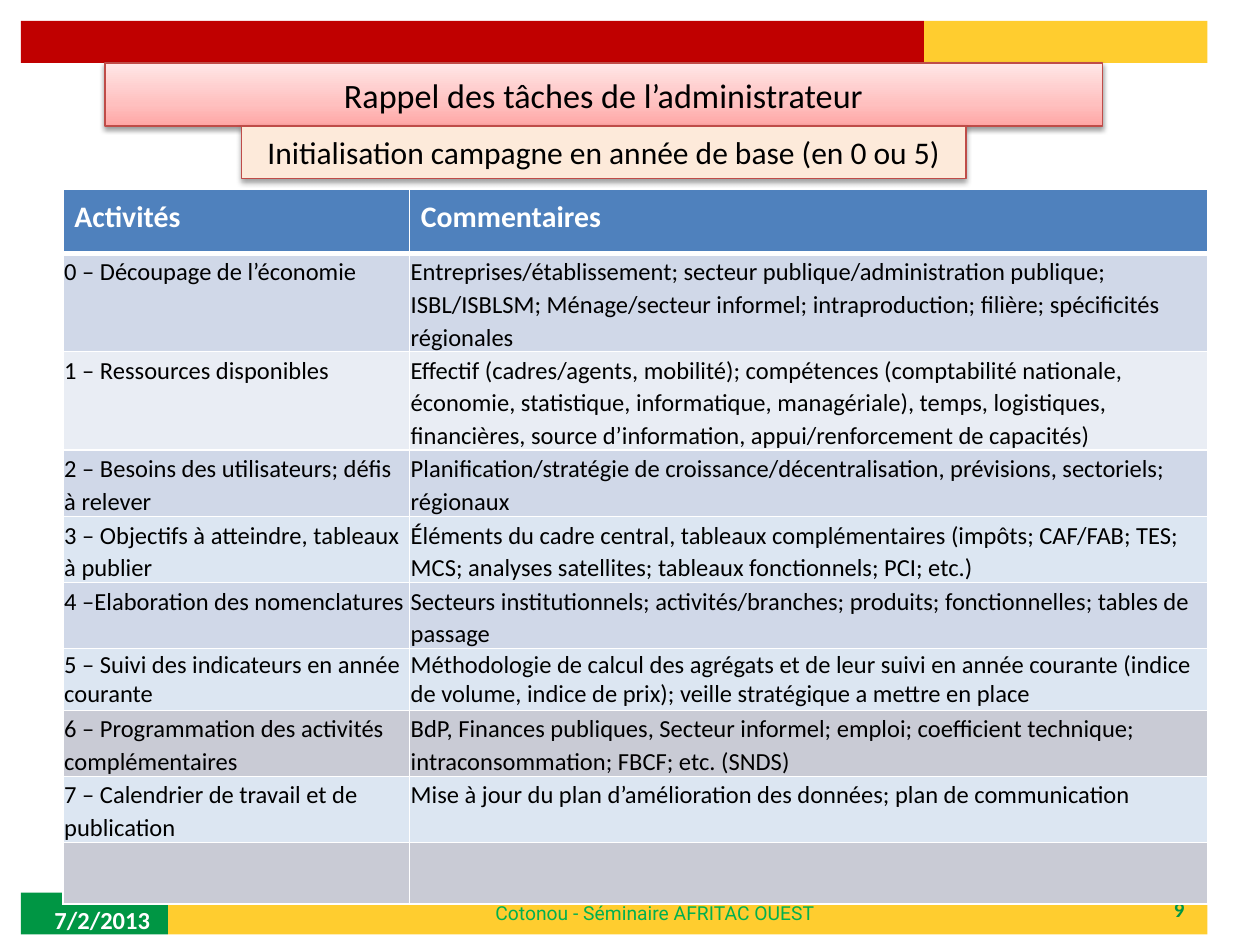
"""Build the slide recalling the administrator's tasks for a base-year campaign."""
from typing import NamedTuple, Optional

from pptx import Presentation
from pptx.dml.color import RGBColor
from pptx.enum.shapes import MSO_SHAPE
from pptx.enum.text import MSO_ANCHOR, PP_ALIGN
from pptx.oxml import parse_xml
from pptx.oxml.ns import nsdecls
from pptx.util import Emu, Inches, Pt

RECTANGLE = MSO_SHAPE.RECTANGLE
MIDDLE, TOP = MSO_ANCHOR.MIDDLE, MSO_ANCHOR.TOP
LEFT, CENTER, RIGHT = PP_ALIGN.LEFT, PP_ALIGN.CENTER, PP_ALIGN.RIGHT

WHITE = RGBColor(0xFF, 0xFF, 0xFF)
BLACK = RGBColor(0x00, 0x00, 0x00)
GREEN = RGBColor(0x00, 0x96, 0x44)
FOOTER_GREEN = RGBColor(0x00, 0xB0, 0x50)
YELLOW = RGBColor(0xFF, 0xCD, 0x2F)
RED = RGBColor(0xC0, 0x00, 0x00)
BANNER_LINE = RGBColor(0xBF, 0x4C, 0x48)
PEACH = RGBColor(0xFD, 0xEA, 0xDA)
PINK_STOPS = (
    (0, RGBColor(0xFF, 0xA6, 0xA5)),
    (35, RGBColor(0xFF, 0xC0, 0xBF)),
    (100, RGBColor(0xFF, 0xE7, 0xE7)),
)
HEADER_BLUE = RGBColor(0x4F, 0x81, 0xBD)
BAND_BLUE = RGBColor(0xD0, 0xD8, 0xE8)
PALE_BLUE = RGBColor(0xE9, 0xED, 0xF4)
LIGHT_BLUE = RGBColor(0xDC, 0xE6, 0xF2)
GREY = RGBColor(0xC9, 0xCB, 0xD5)

SLIDE_WIDTH, SLIDE_HEIGHT = Inches(10), Inches(7.5)
GRID_COLUMNS = 120
UNIT = SLIDE_WIDTH // GRID_COLUMNS


class Box(NamedTuple):
    """Left, top, width and height in grid units."""
    left: float
    top: float
    width: float
    height: float


class Banner(NamedTuple):
    """Framed heading; without a fill it takes the pink gradient."""
    box: Box
    text: str
    size: float
    fill: Optional[RGBColor]


class Label(NamedTuple):
    """Footer text and its format."""
    box: Box
    text: str
    size: float
    color: RGBColor
    font: str = "Calibri"
    bold: bool = True
    align: PP_ALIGN = LEFT
    anchor: MSO_ANCHOR = MIDDLE
    wrap: bool = True


class Task(NamedTuple):
    """Table row with its height in inches."""
    activity: str
    comment: str
    height: float
    fill: RGBColor
    spacing: float = 1.1


BARS = (
    (Box(2, 85, 14, 4), GREEN),
    (Box(16, 85, 99, 4), YELLOW),
    (Box(2, 2, 86, 4), RED),
    (Box(88, 2, 27, 4), YELLOW),
)
LABELS = (
    Label(Box(86, 85, 28, 3.2), "9", 12, GREEN, align=RIGHT),
    Label(Box(4, 85.2, 28, 4.8), "7/2/2013", 14, WHITE),
    Label(Box(46, 85.2, 33.2, 3.5), "Cotonou - Séminaire AFRITAC OUEST", 11, FOOTER_GREEN,
          font="Roboto", bold=False, anchor=TOP, wrap=False),
)
BANNERS = (
    Banner(Box(10, 6, 95, 6), "Rappel des tâches de l’administrateur", 19.5, None),
    Banner(Box(23, 12, 69, 5), "Initialisation campagne en année de base (en 0 ou 5)", 18, PEACH),
)
TABLE_BOX = Box(6, 18, 109, 67.7)
TABLE_COLUMNS = (33, 76)
TASKS = (
    Task("Activités", "Commentaires", 0.51, HEADER_BLUE),
    Task("0 – Découpage de l’économie",
         "Entreprises/établissement; secteur publique/administration publique; ISBL/ISBLSM; "
         "Ménage/secteur informel; intraproduction; filière; spécificités régionales", 0.49, BAND_BLUE),
    Task("1 – Ressources disponibles",
         "Effectif (cadres/agents, mobilité); compétences (comptabilité nationale, économie, "
         "statistique, informatique, managériale), temps, logistiques, financières, source "
         "d’information, appui/renforcement de capacités)", 0.73, PALE_BLUE),
    Task("2 – Besoins des utilisateurs; défis à relever",
         "Planification/stratégie de croissance/décentralisation, prévisions, sectoriels; régionaux",
         0.53, BAND_BLUE),
    Task("3 – Objectifs à atteindre, tableaux à publier",
         "Éléments du cadre central, tableaux complémentaires (impôts; CAF/FAB; TES; MCS; "
         "analyses satellites; tableaux fonctionnels; PCI; etc.)", 0.52, LIGHT_BLUE),
    Task("4 –Elaboration des nomenclatures",
         "Secteurs institutionnels; activités/branches; produits; fonctionnelles; tables de passage",
         0.49, BAND_BLUE),
    Task("5 – Suivi des indicateurs en année courante",
         "Méthodologie de calcul des agrégats et de leur suivi en année courante (indice de volume, "
         "indice de prix); veille stratégique a mettre en place", 0.49, LIGHT_BLUE, 1.0),
    Task("6 – Programmation des activités complémentaires",
         "BdP, Finances publiques, Secteur informel; emploi; coefficient technique; "
         "intraconsommation; FBCF; etc. (SNDS)", 0.49, GREY),
    Task("7 – Calendrier de travail et de publication",
         "Mise à jour du plan d’amélioration des données; plan de communication", 0.49, LIGHT_BLUE),
    Task("", "", 0.49, GREY),
)


def place(box: Box) -> tuple:
    """Turn grid units into slide lengths."""
    return tuple(Emu(round(value * UNIT)) for value in box)


def write(frame, text: str, *, size: float, color: RGBColor, font: str = "Calibri",
          bold: bool = False, align: PP_ALIGN = LEFT, spacing: float = 1.0) -> None:
    """Write one formatted paragraph into a text frame."""
    paragraph = frame.paragraphs[0]
    paragraph.alignment, paragraph.line_spacing = align, spacing
    run = paragraph.add_run()
    run.text = text
    run.font.name, run.font.size, run.font.bold = font, Pt(size), bold
    run.font.color.rgb = color


def add_bar(slide, box: Box, color: RGBColor):
    """Add a plain rectangle without line or shadow."""
    shape = slide.shapes.add_shape(RECTANGLE, *place(box))
    shape.fill.solid()
    shape.fill.fore_color.rgb = color
    shape.line.fill.background()
    shape.shadow.inherit = False
    return shape


def add_label(slide, label: Label) -> None:
    """Add a footer text box."""
    frame = slide.shapes.add_textbox(*place(label.box)).text_frame
    frame.word_wrap, frame.vertical_anchor = label.wrap, label.anchor
    write(frame, label.text, size=label.size, color=label.color, font=label.font,
          bold=label.bold, align=label.align)


def add_banner(slide, banner: Banner) -> None:
    """Add a framed heading with a soft shadow below it."""
    shape = add_bar(slide, banner.box, banner.fill or WHITE)
    if banner.fill is None:
        stops = "".join(f'<a:gs pos="{share * 1000}"><a:srgbClr val="{color}"/></a:gs>'
                        for share, color in PINK_STOPS)
        shape.fill.gradient()
        gradient = shape.element.spPr.find("{*}gradFill")
        gradient.replace(gradient.find("{*}gsLst"),
                         parse_xml(f'<a:gsLst {nsdecls("a")}>{stops}</a:gsLst>'))
        gradient.find("{*}lin").set("ang", "16200000")
    shape.line.color.rgb, shape.line.width = BANNER_LINE, Pt(0.75)
    shape.element.spPr.find("{*}effectLst").append(parse_xml(
        f'<a:outerShdw {nsdecls("a")} blurRad="{Pt(3.1)}" dist="{Pt(1.6)}" dir="5400000" '
        'rotWithShape="0"><a:srgbClr val="000000"><a:alpha val="38000"/></a:srgbClr></a:outerShdw>'))
    frame = shape.text_frame
    frame.word_wrap, frame.vertical_anchor = True, MIDDLE
    frame.margin_top = frame.margin_bottom = 0
    write(frame, banner.text, size=banner.size, color=BLACK, align=CENTER)


def set_borders(cell, top: float, bottom: float) -> None:
    """Draw white cell borders, with widths in points."""
    for side, width in (("L", 1), ("R", 1), ("T", top), ("B", bottom)):
        cell._tc.get_or_add_tcPr().append(parse_xml(
            f'<a:ln{side} {nsdecls("a")} w="{Pt(width)}"><a:solidFill>'
            f'<a:srgbClr val="{WHITE}"/></a:solidFill></a:ln{side}>'))


def add_task_table(slide) -> None:
    """Add the table of activities and comments."""
    graphic = slide.shapes.add_table(len(TASKS), len(TABLE_COLUMNS), *place(TABLE_BOX))
    table = graphic.table
    for column, units in zip(table.columns, TABLE_COLUMNS):
        column.width = Emu(units * UNIT)
    for index, (row, task) in enumerate(zip(table.rows, TASKS)):
        row.height = Inches(task.height)
        header = index == 0
        for cell, text in zip(row.cells, (task.activity, task.comment)):
            set_borders(cell, top=3 if index == 1 else 1, bottom=3 if header else 1)
            cell.fill.solid()
            cell.fill.fore_color.rgb = task.fill
            side, top, bottom = (0.09, 0.05, 0.05) if header else (0.01, 0.01, 0)
            cell.margin_left = cell.margin_right = Inches(side)
            cell.margin_top, cell.margin_bottom = Inches(top), Inches(bottom)
            if text:
                write(cell.text_frame, text, size=17 if header else 14, bold=header,
                      color=WHITE if header else BLACK, spacing=task.spacing)
    graphic.height = place(TABLE_BOX)[3]


def main() -> None:
    """Build and save the presentation."""
    presentation = Presentation()
    presentation.slide_width, presentation.slide_height = SLIDE_WIDTH, SLIDE_HEIGHT
    slide = presentation.slides.add_slide(presentation.slide_layouts[6])
    for box, color in BARS:
        add_bar(slide, box, color)
    for label in LABELS:
        add_label(slide, label)
    for banner in BANNERS:
        add_banner(slide, banner)
    add_task_table(slide)
    presentation.save("out.pptx")


if __name__ == "__main__":
    main()
